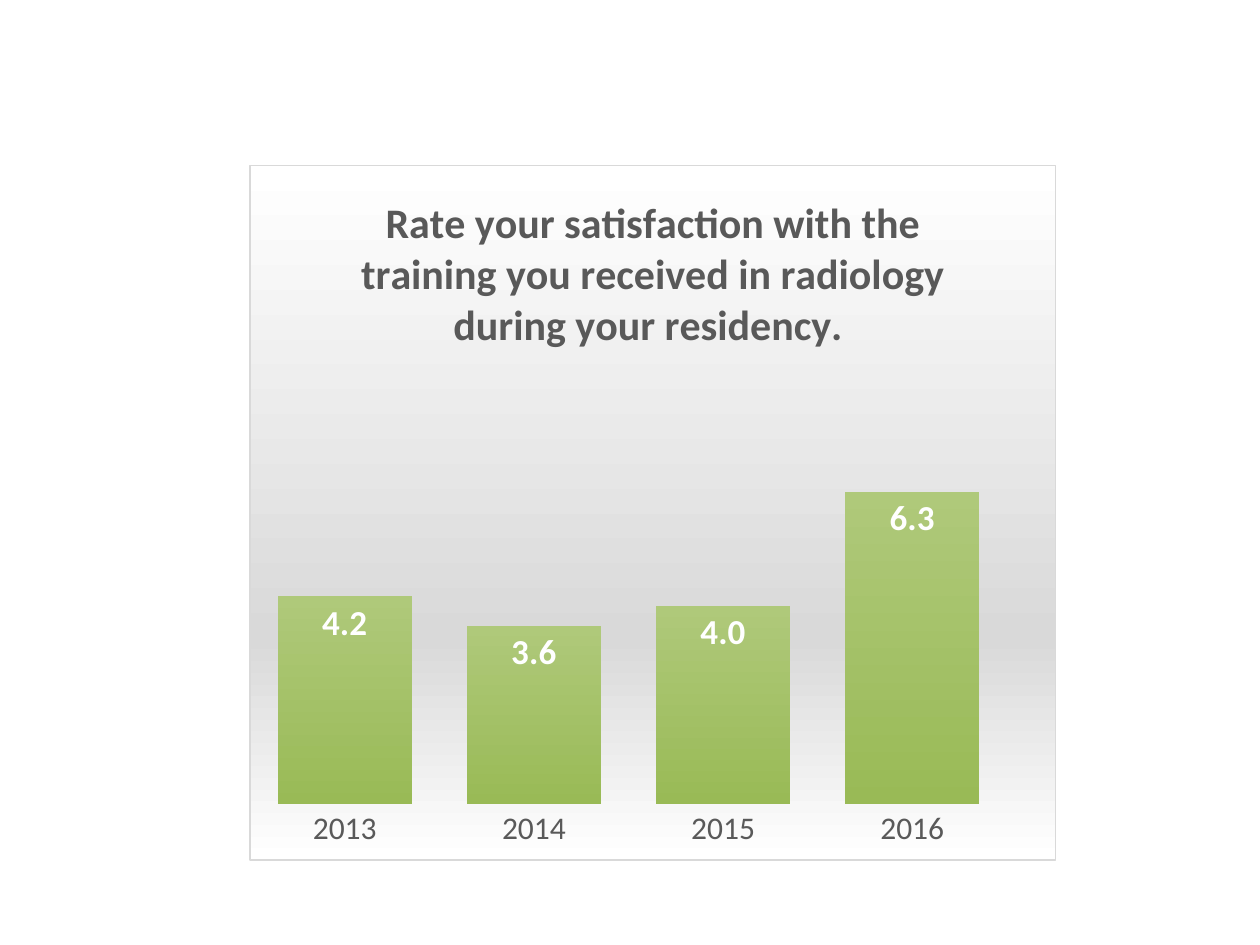
from lxml import etree
from pptx import Presentation, util as u
from pptx.chart.data import CategoryChartData
from pptx.dml.color import RGBColor
from pptx.enum import chart as ch
from pptx.oxml import parse_xml
from pptx.oxml.ns import nsdecls, qn

GREY = "595959"
BORDER = "D9D9D9"
RATINGS = {"2013": 4.2, "2014": 3.6, "2015": 4.0, "2016": 6.3}
QUESTION = ("Rate your satisfaction with the training you received "
            "in radiology during your residency. ")


def style(font, size, color, bold=False):
    font.name = "Calibri"
    font.size = u.Pt(size)
    font.bold = bold
    font.color.rgb = RGBColor.from_string(color)


def shape_properties(stops, line=""):
    """Return chart formatting with a top-to-bottom gradient and an outline."""
    marks = "".join(
        f'<a:gs pos="{share * 1000}"><a:srgbClr val="{color}"/></a:gs>'
        for share, color in stops)
    outline = (f'<a:ln w="{u.Pt(0.75)}"><a:solidFill><a:srgbClr val="{line}"/>'
               '</a:solidFill></a:ln>' if line else '<a:ln><a:noFill/></a:ln>')
    return parse_xml(
        f'<c:spPr {nsdecls("c", "a")}><a:gradFill><a:gsLst>{marks}</a:gsLst>'
        f'<a:lin ang="5400000" scaled="0"/></a:gradFill>{outline}</c:spPr>')


def place_plot(chart, **shares):
    """Fix the inner plot area as shares of the chart's size."""
    plot_area = chart._chartSpace.chart.plotArea
    for old in plot_area.findall(qn("c:layout")):
        plot_area.remove(old)
    layout = etree.Element(qn("c:layout"))
    manual = etree.SubElement(layout, qn("c:manualLayout"))
    settings = {"layoutTarget": "inner", "xMode": "edge", "yMode": "edge", **shares}
    for tag, value in settings.items():
        etree.SubElement(manual, qn(f"c:{tag}")).set("val", str(value))
    plot_area.insert(0, layout)


def satisfaction_chart(slide, left, top, width, height):
    data = CategoryChartData(number_format="0.0")
    data.categories = list(RATINGS)
    data.add_series("Series 1", list(RATINGS.values()))
    chart = slide.shapes.add_chart(
        ch.XL_CHART_TYPE.COLUMN_CLUSTERED, left, top, width, height, data).chart
    style(chart.font, 10, "000000")
    chart.has_legend = False
    chart._chartSpace.chart.addnext(shape_properties(
        [(0, "FFFFFF"), (68, BORDER), (100, "FFFFFF")], BORDER))
    place_plot(chart, x=0, y=0.42, w=0.94, h=0.5)

    chart.has_title = True
    chart.chart_title.include_in_layout = False
    heading = chart.chart_title.text_frame
    heading.text = QUESTION
    style(heading.paragraphs[0].font, 24, GREY, bold=True)

    years = chart.category_axis
    years.major_tick_mark = ch.XL_TICK_MARK.NONE
    years.format.line.fill.background()
    style(years.tick_labels.font, 18, GREY)

    scores = chart.value_axis
    scores.minimum_scale, scores.maximum_scale = 0, 7
    scores.has_major_gridlines = False
    scores.visible = False

    plot = chart.plots[0]
    plot.gap_width = 41
    plot.vary_by_categories = False
    bars = plot.series[0]
    bars.invert_if_negative = False
    bars._element.find(qn("c:tx")).addnext(
        shape_properties([(0, "AFC97A"), (100, "99BA56")]))

    labels = bars.data_labels
    labels.show_value = True
    labels.number_format = "0.0"
    labels.number_format_is_linked = False
    labels.position = ch.XL_LABEL_POSITION.INSIDE_END
    style(labels.font, 20, "FFFFFF", bold=True)


def main():
    deck = Presentation()
    deck.slide_width, deck.slide_height = u.Inches(10), u.Inches(7.5)
    slide = deck.slides.add_slide(deck.slide_layouts[6])
    satisfaction_chart(slide, u.Inches(1.98), u.Inches(1.31),
                       u.Inches(6.4), u.Inches(5.52))
    deck.save("out.pptx")


if __name__ == "__main__":
    main()
